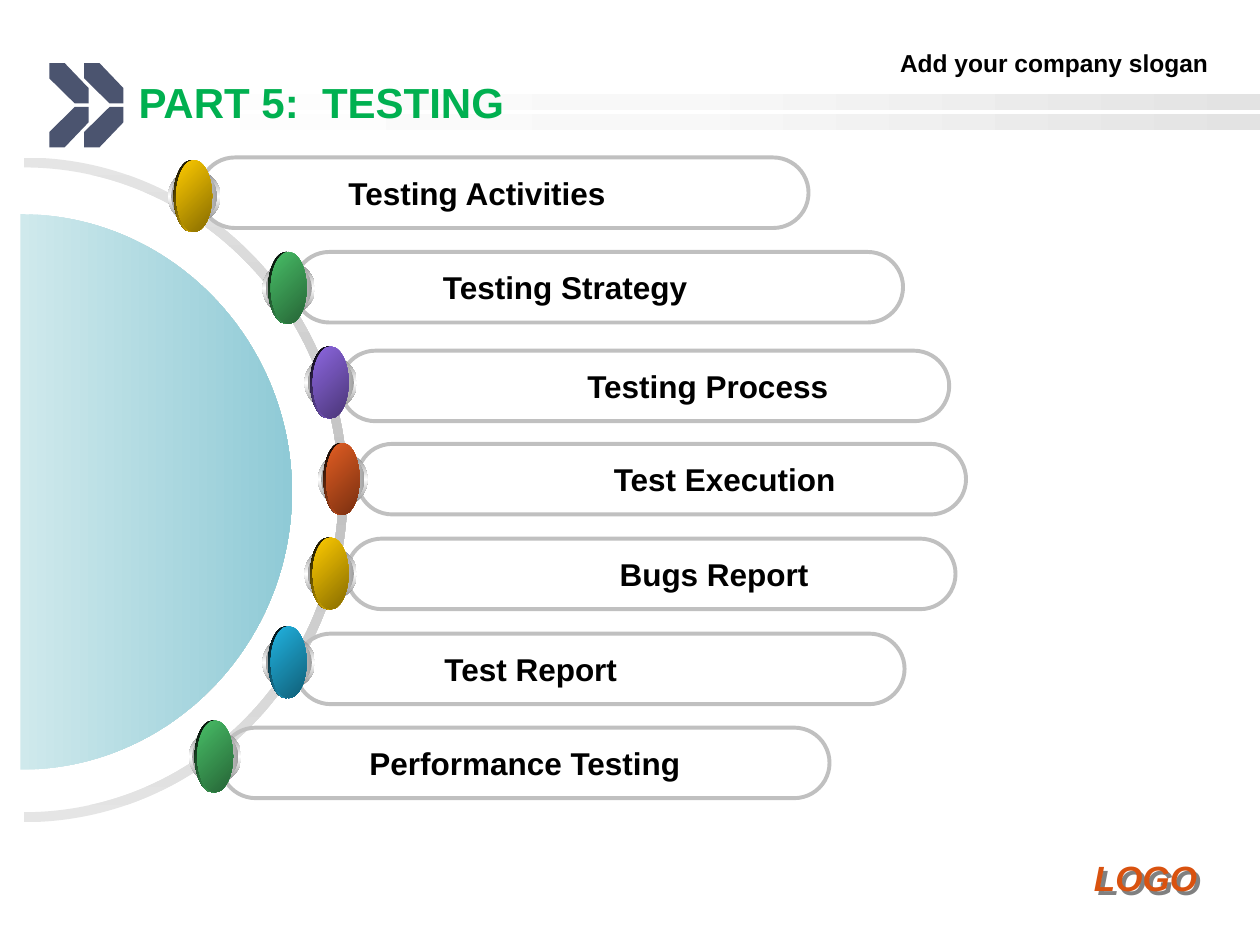
from collections import namedtuple

import lxml.etree
import pptx
import pptx.dml.color
import pptx.enum.shapes
import pptx.enum.text
import pptx.oxml.ns
import pptx.util

RGBColor = pptx.dml.color.RGBColor
Shapes = pptx.enum.shapes.MSO_SHAPE
Align = pptx.enum.text.PP_ALIGN
Anchor = pptx.enum.text.MSO_ANCHOR
qn = pptx.oxml.ns.qn

BLACK = RGBColor(0x00, 0x00, 0x00)
WHITE = RGBColor(0xFF, 0xFF, 0xFF)
GREEN_TITLE = RGBColor(0x00, 0xB0, 0x50)
ORANGE_LOGO = RGBColor(0xD9, 0x52, 0x0F)
SLATE = RGBColor(0x4B, 0x54, 0x6F)
BAND_MIDDLE = RGBColor(0xF8, 0xF8, 0xF8)
BAND_END = RGBColor(0xE3, 0xE3, 0xE3)
SILVER = RGBColor(0xC0, 0xC0, 0xC0)
PALE_SILVER = RGBColor(0xE5, 0xE5, 0xE5)
RIM_GREY = RGBColor(0x84, 0x84, 0x84)
INNER_GREY = RGBColor(0xA0, 0xA0, 0xA0)
SHADOW_GREY = RGBColor(0x80, 0x80, 0x80)
PALE_TEAL = RGBColor(0xCF, 0xE9, 0xEC)
TEAL = RGBColor(0x8F, 0xCA, 0xD6)
YELLOW = (RGBColor(0xFF, 0xCC, 0x00), RGBColor(0x86, 0x6B, 0x00))
GREEN = (RGBColor(0x48, 0xBE, 0x67), RGBColor(0x26, 0x64, 0x36))
PURPLE = (RGBColor(0x8D, 0x67, 0xE1), RGBColor(0x4A, 0x36, 0x76))
RED = (RGBColor(0xE3, 0x5E, 0x23), RGBColor(0x78, 0x2F, 0x10))
BLUE = (RGBColor(0x21, 0xB3, 0xE1), RGBColor(0x10, 0x5E, 0x76))

COLUMNS, ROWS = 120, 90
SLIDE_WIDTH, SLIDE_HEIGHT = pptx.util.Inches(10), pptx.util.Inches(7.5)
COLUMN, ROW = SLIDE_WIDTH / COLUMNS, SLIDE_HEIGHT / ROWS
ARC_CONTROL = 0.55

Box = namedtuple("Box", "left top width height")
Topic = namedtuple("Topic", "text bar_left bar_top orb_left orb_top orb_width colours align")

BAR_WIDTH, BAR_HEIGHT, ORB_HEIGHT = 58, 6.72, 6.84
TOPICS = [
    Topic("Testing Activities", 19, 15, 16, 15.25, 5, YELLOW, Align.LEFT),
    Topic("Testing Strategy", 28, 24, 25, 24, 5, GREEN, Align.LEFT),
    Topic("Testing Process", 32.4, 33.4, 29, 33, 5, PURPLE, Align.CENTER),
    Topic("Test Execution", 34, 42.28, 30.3, 42.2, 4.7, RED, Align.CENTER),
    Topic("Bugs Report", 33, 51.3, 29, 51.2, 5, YELLOW, Align.CENTER),
    Topic("Test Report", 28.15, 60.35, 25, 59.65, 5, BLUE, Align.LEFT),
    Topic("Performance Testing", 21, 69.3, 18, 68.62, 5, GREEN, Align.LEFT),
]


def on_slide(box):
    return [round(value * unit) for value, unit in zip(box, (COLUMN, ROW, COLUMN, ROW))]


def inside(box, left, top, width, height):
    return Box(box.left + left * box.width, box.top + top * box.height,
               width * box.width, height * box.height)


def set_gradient(shape, colours, angle):
    shape.fill.gradient()
    shape.fill.gradient_angle = -angle % 360
    stops = shape._element.spPr.find(qn("a:gradFill")).find(qn("a:gsLst"))
    for stop in list(stops):
        stops.remove(stop)
    for index, colour in enumerate(colours):
        position = round(index * 100000 / (len(colours) - 1))
        stop = lxml.etree.SubElement(stops, qn("a:gs"), pos=str(position))
        lxml.etree.SubElement(stop, qn("a:srgbClr"), val=str(colour))


def add_gradient_shape(page, kind, box, colours, angle):
    shape = page.shapes.add_shape(kind, *on_slide(box))
    shape.shadow.inherit = False
    shape.line.fill.background()
    set_gradient(shape, colours, angle)


def add_outline(page, points):
    corners = [(round(x * COLUMN), round(y * ROW)) for x, y in points]
    builder = page.shapes.build_freeform(*corners[0], scale=1.0)
    builder.add_line_segments(corners[1:], close=True)
    shape = builder.convert_to_shape()
    shape.shadow.inherit = False
    shape.line.fill.background()
    return shape


def round_diagonals(shape):
    start = None
    for segment in list(shape._element.iter(qn("a:moveTo"), qn("a:lnTo"))):
        point = segment.find(qn("a:pt"))
        end = int(point.get("x")), int(point.get("y"))
        if start and start[0] != end[0] and start[1] != end[1]:
            reach = [round(ARC_CONTROL * (b - a)) for a, b in zip(start, end)]
            if end[0] > start[0]:
                controls = (start[0] + reach[0], start[1]), (end[0], end[1] - reach[1])
            else:
                controls = (start[0], start[1] + reach[1]), (end[0] - reach[0], end[1])
            curve = lxml.etree.Element(qn("a:cubicBezTo"))
            for x, y in (*controls, end):
                lxml.etree.SubElement(curve, qn("a:pt"), x=str(x), y=str(y))
            segment.getparent().replace(segment, curve)
        start = end


def write(shape, text, align, anchor, **font_values):
    frame = shape.text_frame
    frame.word_wrap = True
    frame.vertical_anchor = anchor
    para = frame.paragraphs[0]
    para.alignment = align
    span = para.add_run()
    span.text = text
    colour = font_values.pop("colour", BLACK)
    for name, value in {"name": "Arial", "bold": True, **font_values}.items():
        setattr(span.font, name, value)
    span.font.color.rgb = colour


def add_bands(page, box):
    for top in (0, 0.55):
        add_gradient_shape(page, Shapes.RECTANGLE, inside(box, 0, top, 1, 0.45),
                           (WHITE, BAND_MIDDLE, BAND_END), 0)


def add_chevrons(page, box):
    arm = [(0, 0), (0, 0.38), (0.65, 1), (1, 1), (1, 0.62), (0.39, 0)]
    for left in (0, 0.47):
        for top, flipped in ((0, False), (0.52, True)):
            part = inside(box, left, top, 0.53, 0.48)
            points = [(part.left + x * part.width,
                       part.top + (1 - y if flipped else y) * part.height) for x, y in arm]
            shape = add_outline(page, points)
            shape.fill.solid()
            shape.fill.fore_color.rgb = SLATE


def add_title(page, box):
    title = page.shapes.title
    title.left, title.top, title.width, title.height = on_slide(box)
    write(title, "PART 5:  TESTING", Align.LEFT, Anchor.MIDDLE,
          size=pptx.util.Pt(24), colour=GREEN_TITLE)
    page.shapes._spTree.append(title._element)


def add_slogan(page, box):
    slogan = page.shapes.add_textbox(*on_slide(box))
    write(slogan, "Add your company slogan", Align.RIGHT, Anchor.TOP, size=pptx.util.Pt(14))


def add_logo_text(page, box):
    logo = page.shapes.add_textbox(*on_slide(box))
    write(logo, "LOGO", Align.LEFT, Anchor.TOP,
          size=pptx.util.Pt(20), italic=True, colour=ORANGE_LOGO)
    effects = lxml.etree.SubElement(logo._element.spPr, qn("a:effectLst"))
    shadow = lxml.etree.SubElement(effects, qn("a:outerShdw"),
                                   dist=str(pptx.util.Pt(3)), dir="2700000")
    lxml.etree.SubElement(shadow, qn("a:srgbClr"), val=str(SHADOW_GREY))


def half_ellipse(box):
    return [(box.left, box.top), (box.left + box.width, box.top + box.height / 2),
            (box.left, box.top + box.height)]


def add_half_disc(page, box):
    disc = add_outline(page, half_ellipse(box))
    round_diagonals(disc)
    set_gradient(disc, (PALE_TEAL, TEAL), 0)


def add_ring(page, box):
    inner = half_ellipse(inside(box, 0, 0.015, 0.973, 0.97))
    ring = add_outline(page, half_ellipse(box) + inner[::-1])
    round_diagonals(ring)
    set_gradient(ring, (PALE_SILVER, SILVER, PALE_SILVER), 90)


def add_bar(page, box, topic):
    bar = page.shapes.add_shape(Shapes.ROUNDED_RECTANGLE, *on_slide(box))
    bar.adjustments[0] = 0.5
    bar.shadow.inherit = False
    bar.fill.background()
    bar.line.color.rgb = SILVER
    bar.line.width = pptx.util.Pt(2.25)
    bar.text_frame.margin_left = pptx.util.Inches(1.1)
    write(bar, topic.text, topic.align, Anchor.MIDDLE, size=pptx.util.Pt(18))


def add_orb(page, box, colours):
    light, dark = colours
    layers = [
        ((0, 0.14, 1, 0.73), (RIM_GREY, WHITE, RIM_GREY), 90),
        ((0.06, 0.18, 0.88, 0.65), (INNER_GREY, WHITE, INNER_GREY), 0),
        ((0.11, 0, 0.68, 1), (BLACK, light), 45),
        ((0.16, 0, 0.68, 1), (light, dark), 45),
    ]
    for share, shades, angle in layers:
        add_gradient_shape(page, Shapes.OVAL, inside(box, *share), shades, angle)


def main():
    deck = pptx.Presentation()
    deck.slide_width, deck.slide_height = SLIDE_WIDTH, SLIDE_HEIGHT
    page = deck.slides.add_slide(deck.slide_layouts[5])
    add_bands(page, Box(9, 8.95, 111, 3.48))
    add_chevrons(page, Box(4.7, 6, 7.06, 8.04))
    add_slogan(page, Box(44, 4, 72.28, 4))
    add_logo_text(page, Box(103, 81, 14, 5.2))
    add_title(page, Box(12, 6, 99, 7.44))
    add_ring(page, Box(2.3, 15, 30.8, 63.3))
    add_half_disc(page, Box(1.95, 20.4, 25.85, 52.9))
    for topic in TOPICS:
        add_bar(page, Box(topic.bar_left, topic.bar_top, BAR_WIDTH, BAR_HEIGHT), topic)
        add_orb(page, Box(topic.orb_left, topic.orb_top, topic.orb_width, ORB_HEIGHT),
                topic.colours)
    deck.save("out.pptx")


if __name__ == "__main__":
    main()
